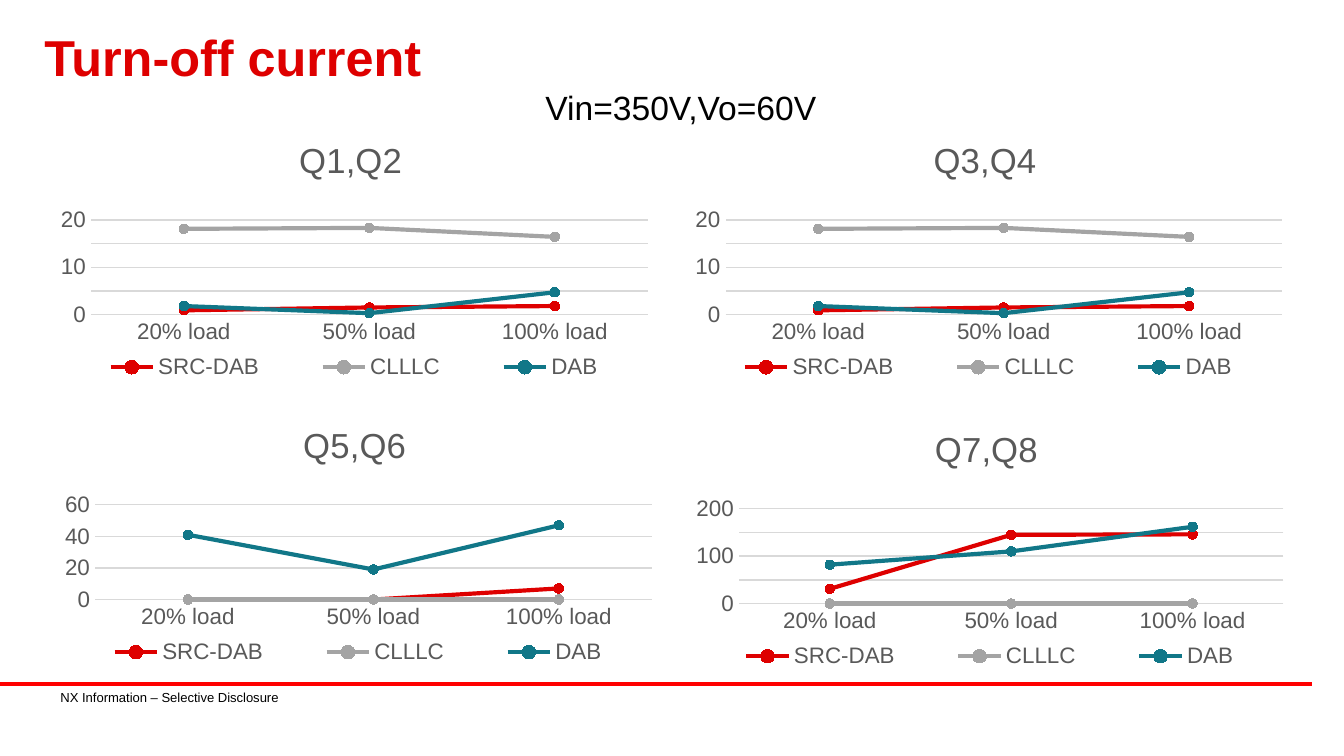
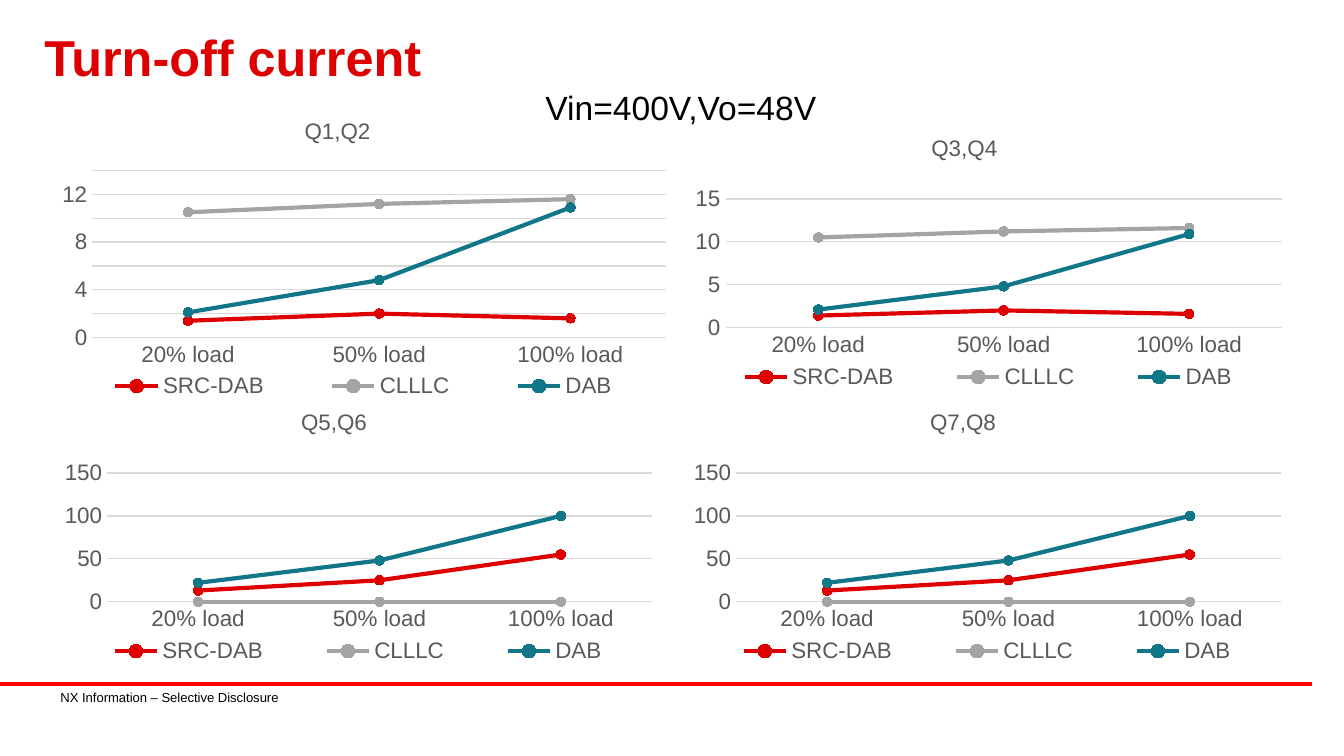
from lxml import etree
from pptx import Presentation
from pptx.chart.data import CategoryChartData
from pptx.dml.color import RGBColor
from pptx.enum.chart import XL_CHART_TYPE, XL_LEGEND_POSITION, XL_MARKER_STYLE, XL_TICK_MARK
from pptx.enum.shapes import MSO_CONNECTOR
from pptx.enum.text import MSO_ANCHOR, MSO_AUTO_SIZE, PP_ALIGN
from pptx.oxml.ns import qn
from pptx.util import Inches, Pt

COLORS = {
    "title": "DE0000", "rule": "FF0000", "text": "000000",
    "label": "595959", "grid": "D9D9D9",
    "SRC-DAB": "DE0000", "CLLLC": "A4A4A4", "DAB": "117788",
}
FONT = "Arial"
LOADS = ["20% load", "50% load", "100% load"]
SERIES = ["SRC-DAB", "CLLLC", "DAB"]
NO_CURRENT = [0, 0, 0]

# Turn-off currents, one list per topology in SERIES order
PRIMARY_350 = [[0.9, 1.5, 1.8], [18.1, 18.3, 16.4], [1.8, 0.3, 4.7]]
Q56_350 = [[0, 0, 7], NO_CURRENT, [41, 19, 47]]
Q78_350 = [[31, 145, 146], NO_CURRENT, [82, 110, 162]]
PRIMARY_400 = [[1.4, 2, 1.6], [10.5, 11.2, 11.6], [2.1, 4.8, 10.9]]
SECONDARY_400 = [[13, 25, 55], NO_CURRENT, [22, 48, 100]]

# Each chart: title, box, values, axis (max, step), plot (top, height) as fractions
TALL, MID, LOW = (0.19, 0.55), (0.25, 0.47), (0.34, 0.36)
SLIDES = [
    ("Vin=350V,Vo=60V", 18.6, [
        ("Q1,Q2", (0.36, 0.97, 4.55, 1.96), PRIMARY_350, (20, 5), LOW),
        ("Q5,Q6", (0.39, 3.09, 4.55, 1.96), Q56_350, (60, 20), LOW),
        ("Q3,Q4", (5.08, 0.97, 4.55, 1.96), PRIMARY_350, (20, 5), LOW),
        ("Q7,Q8", (5.09, 3.12, 4.55, 1.96), Q78_350, (200, 50), LOW),
    ]),
    ("Vin=400V,Vo=48V", 12, [
        ("Q1,Q2", (0.36, 0.84, 4.69, 2.26), PRIMARY_400, (14, 2), TALL),
        ("Q5,Q6", (0.39, 3.01, 4.55, 2.04), SECONDARY_400, (150, 50), MID),
        ("Q3,Q4", (5.08, 0.97, 4.55, 2.04), PRIMARY_400, (15, 5), MID),
        ("Q7,Q8", (5.07, 3.01, 4.55, 2.04), SECONDARY_400, (150, 50), MID),
    ]),
]


def rgb(name):
    return RGBColor.from_string(COLORS[name])


def set_font(font, size, color, bold=False):
    font.name, font.size, font.bold = FONT, Pt(size), bold
    font.color.rgb = rgb(color)


def set_line(line, color, width):
    line.color.rgb = rgb(color)
    line.width = Pt(width)


def put_text(shape, text, size, color, bold=False, align=PP_ALIGN.LEFT,
             anchor=MSO_ANCHOR.TOP, wrap=True, inset=(0.1, 0.05), spacing=None):
    tf = shape.text_frame
    tf.word_wrap = wrap
    tf.auto_size = MSO_AUTO_SIZE.NONE
    tf.vertical_anchor = anchor
    tf.margin_left = tf.margin_right = Inches(inset[0])
    tf.margin_top = tf.margin_bottom = Inches(inset[1])
    p = tf.paragraphs[0]
    p.alignment, p.line_spacing = align, spacing
    r = p.add_run()
    r.text = text
    set_font(r.font, size, color, bold)


def add_text(s, box, text, size, color, **fmt):
    put_text(s.shapes.add_textbox(*map(Inches, box)), text, size, color, **fmt)


def add_title(s, text):
    title = s.shapes.title
    title.left, title.top, title.width, title.height = map(
        Inches, (0.25, 0.12, 9.25, 0.67))
    put_text(title, text, 27, "title", bold=True, anchor=MSO_ANCHOR.MIDDLE,
             inset=(0.08, 0.04), spacing=0.85)


def add_footer(s):
    rule = s.shapes.add_connector(MSO_CONNECTOR.STRAIGHT, Inches(0), Inches(5.09),
                                  Inches(9.76), Inches(5.09))
    set_line(rule.line, "rule", 2.25)
    sp_pr = rule._element.spPr
    etree.SubElement(sp_pr, qn("a:effectLst"))
    add_text(s, (0.37, 5.09, 2.31, 0.2), "NX Information – Selective Disclosure",
             7, "text", inset=(0.08, 0.04))


def set_layout(parent, index, **values):
    """Place a chart part by fractions of the chart's size."""
    for old in parent.findall(qn("c:layout")):
        parent.remove(old)
    layout = etree.Element(qn("c:layout"))
    manual = etree.SubElement(layout, qn("c:manualLayout"))
    for tag, val in values.items():
        etree.SubElement(manual, qn(f"c:{tag}")).set("val", str(val))
    parent.insert(index, layout)


def format_axes(chart, top, step):
    cat, val = chart.category_axis, chart.value_axis
    for axis in (cat, val):
        axis.major_tick_mark = axis.minor_tick_mark = XL_TICK_MARK.NONE
        set_font(axis.tick_labels.font, 12, "label")
    set_line(cat.format.line, "grid", 0.75)
    val.format.line.fill.background()
    val.has_major_gridlines = True
    set_line(val.major_gridlines.format.line, "grid", 0.75)
    val.minimum_scale, val.maximum_scale, val.major_unit = 0, top, step


def add_line_chart(s, title, box, values, scale, plot, title_size):
    data = CategoryChartData()
    data.categories = LOADS
    for name, vals in zip(SERIES, values):
        data.add_series(name, vals)
    chart = s.shapes.add_chart(XL_CHART_TYPE.LINE_MARKERS, *map(Inches, box),
                               data).chart
    set_font(chart.font, 10, "text")
    format_axes(chart, *scale)

    # Series
    chart.plots[0].vary_by_categories = False
    for series in chart.plots[0].series:
        series.smooth = False
        set_line(series.format.line, series.name, 2.25)
        marker = series.marker
        marker.style, marker.size = XL_MARKER_STYLE.CIRCLE, 5
        marker.format.fill.solid()
        marker.format.fill.fore_color.rgb = rgb(series.name)
        set_line(marker.format.line, series.name, 0.75)

    # Legend, spread over the chart's width
    chart.has_legend = True
    chart.legend.position = XL_LEGEND_POSITION.BOTTOM
    chart.legend.include_in_layout = False
    set_font(chart.legend.font, 12, "label")
    set_layout(chart.legend._element, 1, xMode="edge", yMode="edge",
               x=0.01, y=0.83, w=0.98, h=0.14)

    # Title
    chart.has_title = True
    r = chart.chart_title.text_frame.paragraphs[0].add_run()
    r.text = title
    set_font(r.font, title_size, "label")
    set_layout(chart.chart_title._element, 1, xMode="edge", yMode="edge",
               x=0.4, y=0)

    # Plot area: three-digit labels need more room on the left
    left = 0.09 if scale[0] >= 100 else 0.07
    set_layout(chart._chartSpace.chart.plotArea, 0, layoutTarget="inner",
               xMode="edge", yMode="edge", x=left, y=plot[0],
               w=round(0.98 - left, 2), h=plot[1])


def main():
    prs = Presentation()
    prs.slide_width = Inches(10)
    prs.slide_height = prs.slide_width * 9 // 16
    for condition, title_size, charts in SLIDES:
        s = prs.slides.add_slide(prs.slide_layouts[5])
        add_footer(s)
        add_title(s, "Turn-off current")
        for chart in charts:
            add_line_chart(s, *chart, title_size)
        add_text(s, (3.96, 0.6, 2.24, 0.4), condition, 18, "text", wrap=False)
    prs.save("out.pptx")


if __name__ == "__main__":
    main()
